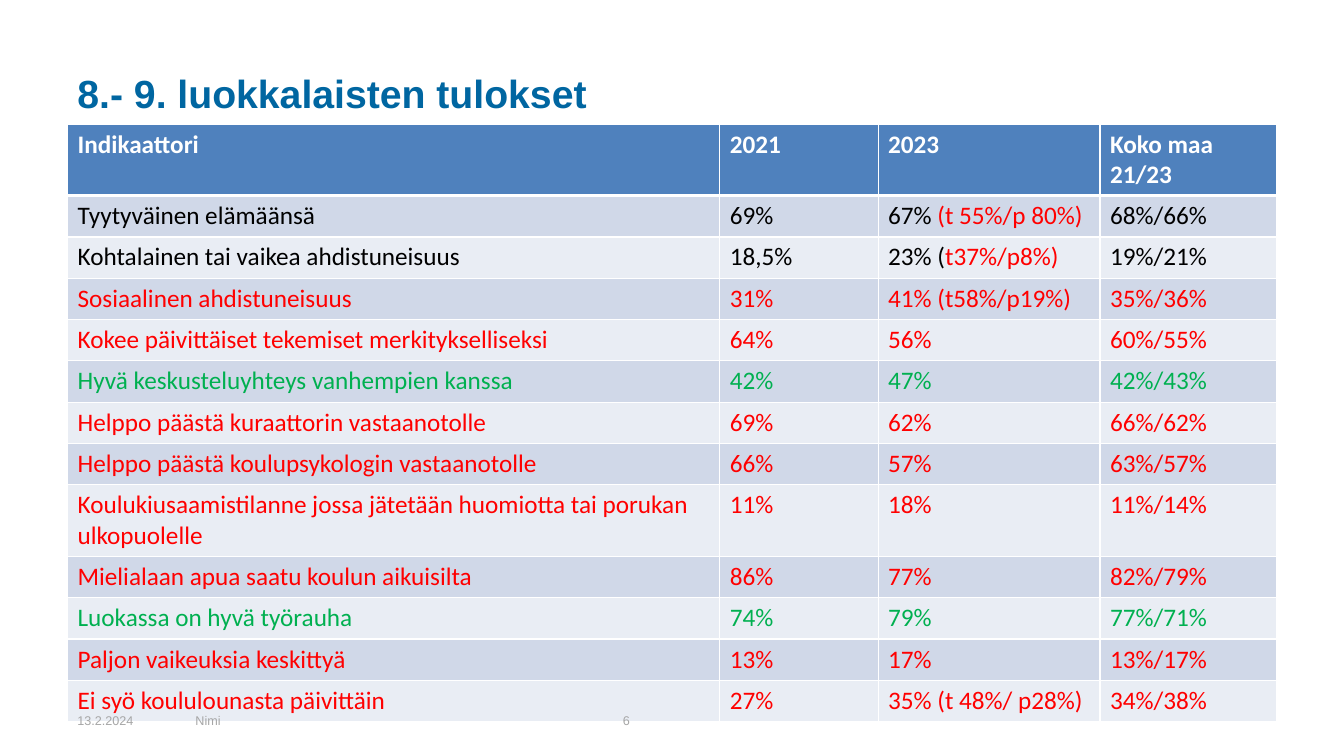
"""Builds the slide of survey results for grades 8 and 9."""
from lxml import etree
from pptx import Presentation
from pptx.dml.color import RGBColor
from pptx.enum.text import MSO_ANCHOR
from pptx.oxml import parse_xml
from pptx.oxml.ns import nsdecls
from pptx.util import Inches, Pt

COLORS = {
    "title": "0066A1", "header": "4F81BD", "band": "D0D8E8", "light": "E9EDF4",
    "white": "FFFFFF", "black": "000000", "red": "FF0000", "green": "00B050",
    "grey": "A6A6A6",
}

HEADINGS = ["Indikaattori", "2021", "2023", "Koko maa 21/23"]
RESULTS = [
    ("black", "Tyytyväinen elämäänsä", "69%", ("67% ", "(t 55%/p 80%)"), "68%/66%"),
    ("black", "Kohtalainen tai vaikea ahdistuneisuus", "18,5%", ("23% (", "t37%/p8%)"), "19%/21%"),
    ("red", "Sosiaalinen ahdistuneisuus", "31%", "41% (t58%/p19%)", "35%/36%"),
    ("red", "Kokee päivittäiset tekemiset merkitykselliseksi", "64%", "56%", "60%/55%"),
    ("green", "Hyvä keskusteluyhteys vanhempien kanssa", "42%", "47%", "42%/43%"),
    ("red", "Helppo päästä kuraattorin vastaanotolle", "69%", "62%", "66%/62%"),
    ("red", "Helppo päästä koulupsykologin vastaanotolle", "66%", "57%", "63%/57%"),
    ("red", "Koulukiusaamistilanne jossa jätetään huomiotta tai porukan ulkopuolelle",
     "11%", "18%", "11%/14%"),
    ("red", "Mielialaan apua saatu koulun aikuisilta", "86%", "77%", "82%/79%"),
    ("green", "Luokassa on hyvä työrauha", "74%", "79%", "77%/71%"),
    ("red", "Paljon vaikeuksia keskittyä", "13%", "17%", "13%/17%"),
    ("red", "Ei syö koululounasta päivittäin", "27%", "35% (t 48%/ p28%)", "34%/38%"),
]


def add_text(p, text, size=18, font="Calibri", color="black", bold=False):
    r = p.add_run()
    r.text = text
    r.font.size = Pt(size)
    r.font.name = font
    r.font.bold = bold
    r.font.color.rgb = RGBColor.from_string(COLORS[color])


def set_borders(cell, **widths):
    tc_pr = cell._tc.get_or_add_tcPr()
    for i, (side, width) in enumerate(widths.items()):
        ln = parse_xml(f'<a:ln{side} {nsdecls("a")} w="{Pt(width)}"/>')
        fill = etree.SubElement(ln, ln.tag.replace(f"ln{side}", "solidFill"))
        etree.SubElement(fill, ln.tag.replace(f"ln{side}", "srgbClr"), val=COLORS["white"])
        tc_pr.insert(i, ln)


prs = Presentation()
prs.slide_width, prs.slide_height = Inches(13.33), Inches(7.5)
s = prs.slides.add_slide(prs.slide_layouts[6])

rows = [("white", *HEADINGS)] + RESULTS
col_widths = [6.47, 1.57, 2.2, 1.75]
row_height = 0.41
table = s.shapes.add_table(len(rows), len(col_widths), Inches(0.67), Inches(1.23),
                           Inches(sum(col_widths)), Inches(row_height * len(rows))).table
for col, width in zip(table.columns, col_widths):
    col.width = Inches(width)

for i, (color, *values) in enumerate(rows):
    table.rows[i].height = Inches(row_height)
    fill = "header" if i == 0 else "band" if i % 2 else "light"
    for j, value in enumerate(values):
        cell = table.cell(i, j)
        cell.fill.solid()
        cell.fill.fore_color.rgb = RGBColor.from_string(COLORS[fill])
        set_borders(cell, L=1, R=1, T=3 if i == 1 else 1, B=3 if i == 0 else 1)
        p = cell.text_frame.paragraphs[0]
        parts = [value] if isinstance(value, str) else value
        for part, part_color in zip(parts, (color, "red")):
            add_text(p, part, color=part_color, bold=i == 0)

title_format = dict(size=28, font="Arial", color="title", bold=True)
footer_format = dict(size=9, font="Arial", color="grey")
for text, left, top, width, height, text_format in [
    ("8.- 9. luokkalaisten tulokset", 0.67, 0.3, 12, 1.25, title_format),
    ("13.2.2024", 0.67, 6.95, 1.17, 0.4, footer_format),
    ("Nimi", 1.84, 6.95, 4.22, 0.4, footer_format),
    ("6", 6.08, 6.95, 3.11, 0.4, footer_format),
]:
    sp = s.shapes.add_textbox(Inches(left), Inches(top), Inches(width), Inches(height))
    tf = sp.text_frame
    tf.word_wrap = True
    tf.vertical_anchor = MSO_ANCHOR.MIDDLE
    add_text(tf.paragraphs[0], text, **text_format)

prs.save("out.pptx")
